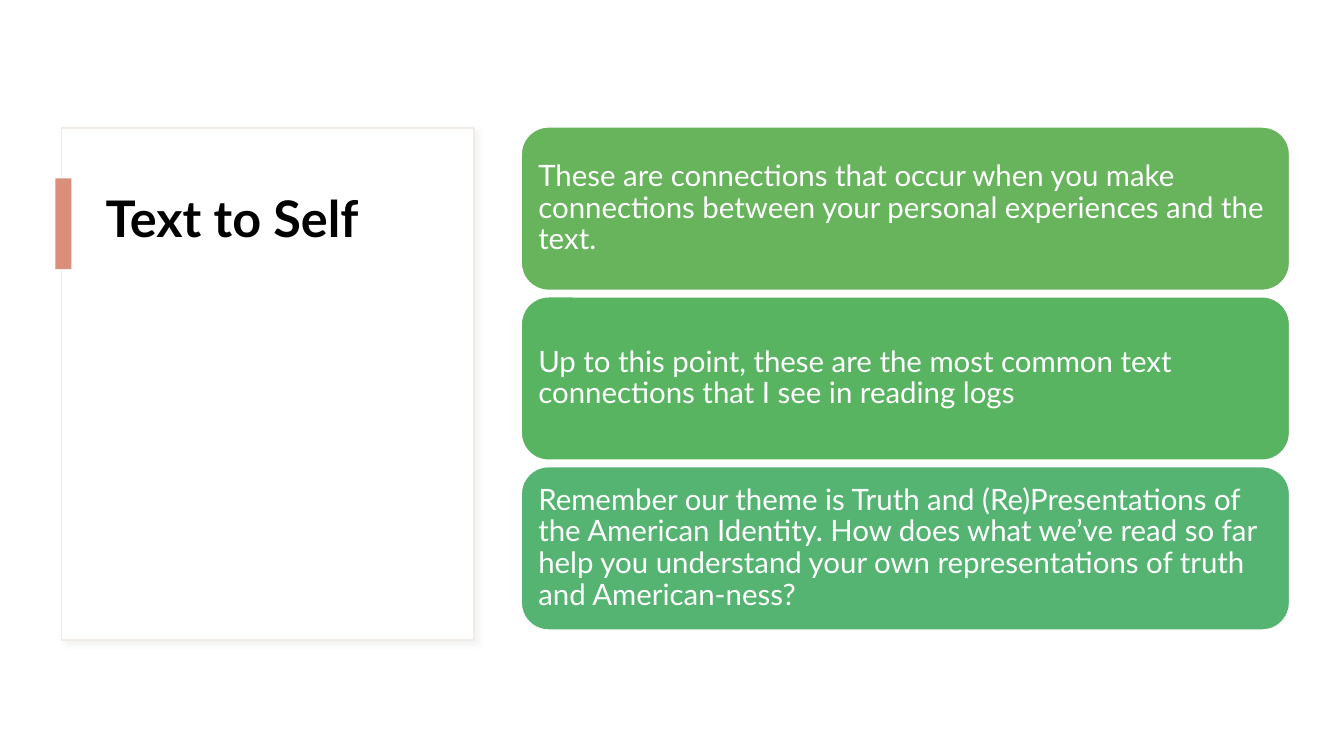
from lxml import etree
from pptx import Presentation
from pptx import util as u
from pptx.dml.color import RGBColor
from pptx.enum import shapes, text
from pptx.oxml.ns import qn

WHITE = RGBColor(0xFF, 0xFF, 0xFF)
BLACK = RGBColor(0, 0, 0)
FRAME = RGBColor(0xF0, 0xEC, 0xE5)
SHADOW = RGBColor(0xD9, 0xD9, 0xD9)
CORAL = RGBColor(0xDA, 0x8F, 0x7A)
GREENS = (
    RGBColor(0x67, 0xB4, 0x5D),
    RGBColor(0x59, 0xB4, 0x62),
    RGBColor(0x55, 0xB4, 0x72),
)
POINTS = (
    "These are connections that occur when you make connections between your personal experiences and the text.",
    "Up to this point, these are the most common text connections that I see in reading logs",
    "Remember our theme is Truth and (Re)Presentations of the American Identity. "
    "How does what we’ve read so far help you understand your own representations of truth and American-ness?",
)


def write(frame, words, size, color, bold=False, inset=(0.1, 0.05), anchor=text.MSO_ANCHOR.TOP):
    frame.word_wrap = True
    frame.vertical_anchor = anchor
    frame.margin_left = frame.margin_right = u.Inches(inset[0])
    frame.margin_top = frame.margin_bottom = u.Inches(inset[1])
    paragraph = frame.paragraphs[0]
    paragraph.alignment = text.PP_ALIGN.LEFT
    paragraph.line_spacing = 0.9
    run = paragraph.add_run()
    run.text = words
    run.font.name = "Lato"
    run.font.size = u.Pt(size)
    run.font.bold = bold
    run.font.color.rgb = color


class Board:
    COLUMNS, ROWS = 80, 45

    def __init__(self, deck):
        self.column = deck.slide_width / self.COLUMNS
        self.row = deck.slide_height / self.ROWS
        self.slide = deck.slides.add_slide(deck.slide_layouts[6])

    def place(self, left, top, width, height):
        return (round(left * self.column), round(top * self.row),
                round(width * self.column), round(height * self.row))

    def block(self, cells, fill, line=None, kind=shapes.MSO_SHAPE.RECTANGLE):
        block = self.slide.shapes.add_shape(kind, *self.place(*cells))
        block.shadow.inherit = False
        block.fill.solid()
        block.fill.fore_color.rgb = fill
        if line is None:
            block.line.fill.background()
        else:
            block.line.color.rgb = line
            block.line.width = u.Pt(1)
        return block

    def panel(self, cells):
        panel = self.block(cells, WHITE, FRAME)
        effects = panel._element.spPr.find(qn("a:effectLst"))
        shadow = etree.SubElement(effects, qn("a:outerShdw"), blurRad=str(u.Pt(4)),
                                  dist=str(u.Pt(3)), dir="2700000", algn="tl", rotWithShape="0")
        tint = etree.SubElement(shadow, qn("a:srgbClr"), val=str(SHADOW))
        etree.SubElement(tint, qn("a:alpha"), val="30000")

    def title(self, cells, words):
        heading = self.slide.shapes.add_textbox(*self.place(*cells))
        write(heading.text_frame, words, 36, BLACK, bold=True)

    def card(self, cells, words, fill):
        card = self.block(cells, fill, WHITE, shapes.MSO_SHAPE.ROUNDED_RECTANGLE)
        write(card.text_frame, words, 21, WHITE, inset=(0.09, 0.09), anchor=text.MSO_ANCHOR.MIDDLE)


def main():
    deck = Presentation()
    deck.slide_width, deck.slide_height = u.Inches(13.33), u.Inches(7.5)
    board = Board(deck)
    board.panel((3.66, 7.62, 24.55, 30.48))
    board.title((5.7, 11.28, 20.35, 23.1), "Text to Self")
    board.block((3.3, 10.62, 0.96, 5.4), CORAL)
    for index, (point, green) in enumerate(zip(POINTS, GREENS)):
        board.card((31.03, 7.56 + index * 10.11, 45.73, 9.72), point, green)
    deck.save("out.pptx")


if __name__ == "__main__":
    main()
